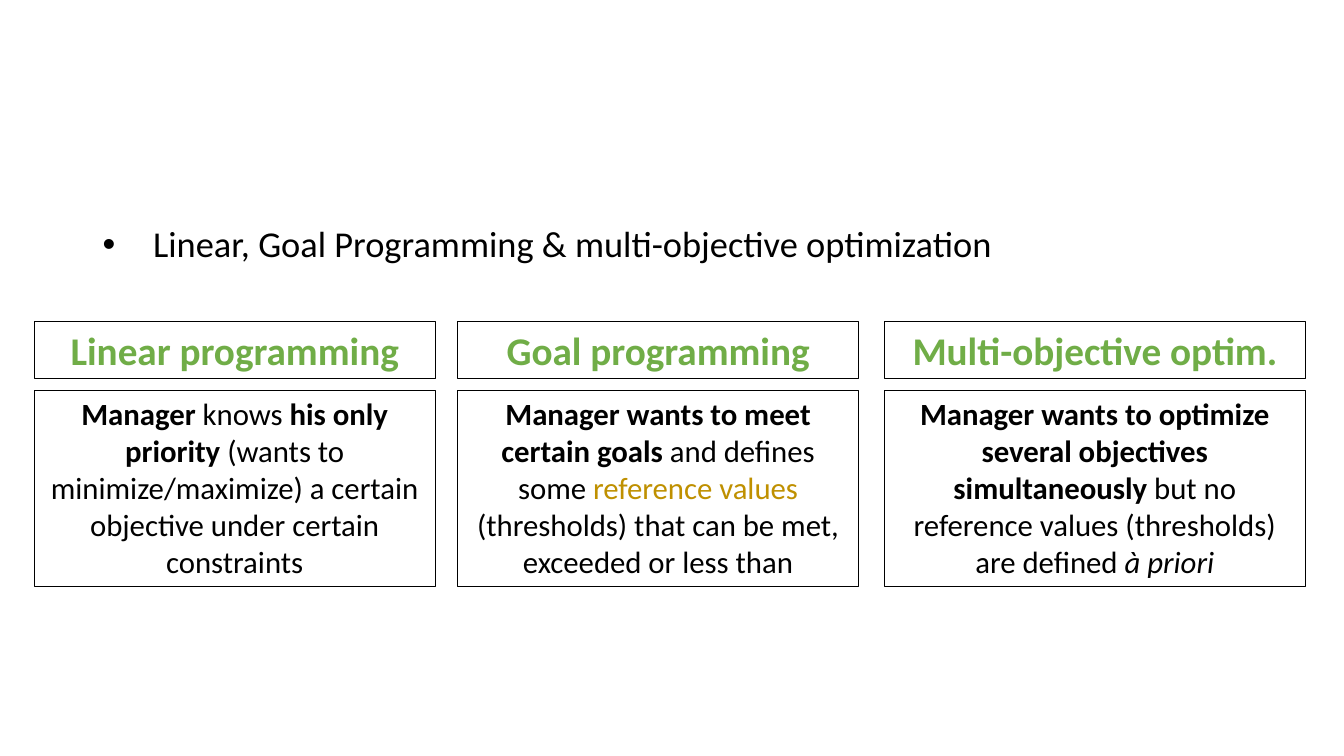
from dataclasses import dataclass

from lxml import etree
from pptx import Presentation
from pptx.dml.color import RGBColor
from pptx.enum.shapes import MSO_SHAPE
from pptx.enum.text import MSO_ANCHOR, MSO_AUTO_SIZE, PP_ALIGN
from pptx.oxml.ns import qn
from pptx.slide import Slide
from pptx.text.text import TextFrame
from pptx.util import Cm, Pt

RECTANGLE = MSO_SHAPE.RECTANGLE
TOP = MSO_ANCHOR.TOP
CENTER = PP_ALIGN.CENTER
LEFT = PP_ALIGN.LEFT
GROW = MSO_AUTO_SIZE.SHAPE_TO_FIT_TEXT

FONT = "Calibri"
BLACK, GREEN, GOLD = "000000", "70AD47", "BF9000"
TITLE_TOP, TITLE_HEIGHT = 8.1, 1.45
BODY_TOP, BODY_HEIGHT = 9.83, 4.95


@dataclass(frozen=True)
class Span:
    text: str
    bold: bool = False
    italic: bool = False
    color: str = BLACK


@dataclass(frozen=True)
class Method:
    left: float
    width: float
    title: str
    body: tuple[Span, ...]


METHODS = (
    Method(0.86, 10.11, "Linear programming", (
        Span("Manager ", bold=True),
        Span("knows"),
        Span(" his only priority ", bold=True),
        Span("(wants to minimize/maximize) a certain objective under certain constraints"),
    )),
    Method(11.53, 10.11, "Goal programming", (
        Span("Manager wants to meet certain goals ", bold=True),
        Span("and defines some "),
        Span("reference values ", color=GOLD),
        Span("(thresholds) that can be met, exceeded or less than"),
    )),
    Method(22.28, 10.62, "Multi-objective optim.", (
        Span("Manager wants to optimize several objectives simultaneously ", bold=True),
        Span("but no reference values (thresholds) are defined "),
        Span("à priori", italic=True),
    )),
)


def rgb(value: str) -> RGBColor:
    return RGBColor.from_string(value)


def write(tf: TextFrame, spans: tuple[Span, ...], size: float, align: PP_ALIGN) -> None:
    tf.word_wrap = True
    tf.auto_size = GROW
    tf.vertical_anchor = TOP
    p = tf.paragraphs[0]
    p.alignment = align
    for span in spans:
        r = p.add_run()
        r.text = span.text
        r.font.name = FONT
        r.font.size = Pt(size)
        r.font.bold = span.bold
        r.font.italic = span.italic
        r.font.color.rgb = rgb(span.color)


def add_box(s: Slide, method: Method, top: float, height: float,
            spans: tuple[Span, ...], size: float) -> None:
    sp = s.shapes.add_shape(RECTANGLE, Cm(method.left), Cm(top), Cm(method.width), Cm(height))
    sp.shadow.inherit = False
    sp.fill.background()
    sp.line.color.rgb = rgb(BLACK)
    sp.line.width = Pt(0.75)
    write(sp.text_frame, spans, size, CENTER)


def add_heading(s: Slide, text: str) -> None:
    sp = s.shapes.add_textbox(Cm(2.34), Cm(5.46), Cm(24.61), Cm(1.37))
    write(sp.text_frame, (Span(text),), 26, LEFT)
    props = sp.text_frame.paragraphs[0]._p.get_or_add_pPr()
    props.set("marL", str(Cm(1.27)))
    props.set("indent", str(Cm(-1.27)))
    etree.SubElement(props, qn("a:buFont"), typeface="Arial")
    etree.SubElement(props, qn("a:buChar"), char="•")


def main() -> None:
    prs = Presentation()
    prs.slide_width, prs.slide_height = Cm(33.87), Cm(19.05)
    s = prs.slides.add_slide(prs.slide_layouts[6])
    for method in METHODS:
        title = (Span(method.title, bold=True, color=GREEN),)
        add_box(s, method, TITLE_TOP, TITLE_HEIGHT, title, 28)
        add_box(s, method, BODY_TOP, BODY_HEIGHT, method.body, 22)
    add_heading(s, "Linear, Goal Programming & multi-objective optimization")
    prs.save("out.pptx")


if __name__ == "__main__":
    main()
